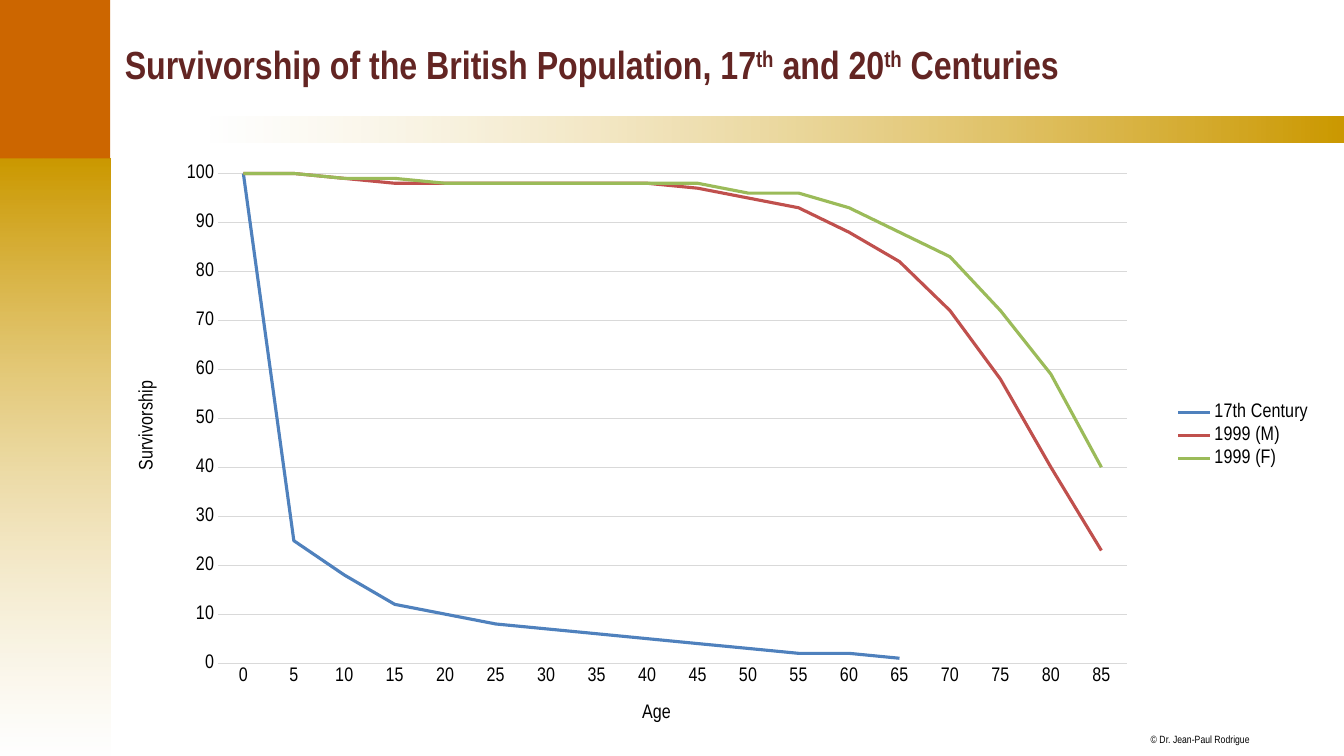
from dataclasses import dataclass
from typing import Optional

from lxml import etree
from pptx import Presentation
from pptx import util as u
from pptx.chart import data as cd
from pptx.dml.color import RGBColor
from pptx.enum import chart as ch, shapes, text
from pptx.oxml import ns

FACE = "Arial Narrow"
BLACK = RGBColor(0x00, 0x00, 0x00)
WHITE = RGBColor(0xFF, 0xFF, 0xFF)
GOLD = RGBColor(0xCC, 0x99, 0x00)
RUST = RGBColor(0xCC, 0x66, 0x00)
WINE = RGBColor(0x63, 0x25, 0x23)
GREY = RGBColor(0xD9, 0xD9, 0xD9)
BLUE = RGBColor(0x4F, 0x81, 0xBD)
RED = RGBColor(0xC0, 0x50, 0x4D)
GREEN = RGBColor(0x9B, 0xBB, 0x59)


@dataclass
class Band:
    left: float
    top: float
    width: float
    height: float
    first: RGBColor
    last: Optional[RGBColor] = None
    angle: float = 0


@dataclass
class Curve:
    name: str
    color: RGBColor
    vals: list


BANDS = [
    Band(-0.04, 3.99, 2.83, 15.06, GOLD, WHITE, 270),
    Band(5.31, 2.93, 28.57, 0.67, WHITE, GOLD),
    Band(-0.04, -0.03, 2.82, 4.02, RUST),
]
CURVES = [
    Curve("17th Century", BLUE,
          [100, 25, 18, 12, 10, 8, 7, 6, 5, 4, 3, 2, 2, 1] + [None] * 4),
    Curve("1999 (M)", RED,
          [100, 100, 99, 98, 98, 98, 98, 98, 98, 97, 95, 93, 88, 82, 72, 58,
           40, 23]),
    Curve("1999 (F)", GREEN,
          [100, 100, 99, 99, 98, 98, 98, 98, 98, 98, 96, 96, 93, 88, 83, 72,
           59, 40]),
]
TITLE = [("Survivorship of the British Population, 17", False), ("th", True),
         (" and 20", False), ("th", True), (" Centuries", False)]


def style(font, size: float, color: RGBColor, bold: bool = False) -> None:
    form = {"name": FACE, "size": u.Pt(size), "bold": bold}
    for key, val in form.items():
        setattr(font, key, val)
    font.color.rgb = color


def draw_band(slide, band: Band) -> None:
    box = slide.shapes.add_shape(
        shapes.MSO_SHAPE.RECTANGLE, u.Cm(band.left), u.Cm(band.top),
        u.Cm(band.width), u.Cm(band.height))
    box.shadow.inherit = False
    box.line.fill.background()
    if band.last is None:
        box.fill.solid()
        box.fill.fore_color.rgb = band.first
        return
    box.fill.gradient()
    box.fill.gradient_angle = band.angle
    for stop, color in zip(box.fill.gradient_stops, (band.first, band.last)):
        stop.color.rgb = color
    # The white end is half transparent
    for node in box._element.spPr.iter(ns.qn("a:srgbClr")):
        if node.get("val") == str(WHITE):
            etree.SubElement(node, ns.qn("a:alpha")).set("val", "50000")


def draw_title(slide) -> None:
    head = slide.shapes.title
    form = {"left": 2.89, "top": 0.28, "width": 30.4, "height": 2.64}
    for key, val in form.items():
        setattr(head, key, u.Cm(val))
    frame = head.text_frame
    frame.vertical_anchor = text.MSO_ANCHOR.MIDDLE
    frame.word_wrap = True
    para = frame.paragraphs[0]
    para.alignment = text.PP_ALIGN.LEFT
    for words, raised in TITLE:
        run = para.add_run()
        run.text = words
        style(run.font, 28, WINE, True)
        if raised:
            run.font._element.set("baseline", "30000")


def draw_credit(slide) -> None:
    box = slide.shapes.add_textbox(u.Cm(29), u.Cm(18.48), u.Cm(2.51), u.Cm(0.33))
    frame = box.text_frame
    for side in ("left", "top", "right", "bottom"):
        setattr(frame, "margin_" + side, 0)
    frame.word_wrap = False
    run = frame.paragraphs[0].add_run()
    run.text = "© Dr. Jean-Paul Rodrigue"
    style(run.font, 7.5, BLACK)


def make_layout(inner: bool, **parts: float):
    """Build a manual chart layout from percentages of the chart area."""
    lay = etree.Element(ns.qn("c:layout"))
    man = etree.SubElement(lay, ns.qn("c:manualLayout"))
    tags = {"layoutTarget": "inner"} if inner else {}
    tags |= {"xMode": "edge", "yMode": "edge"}
    tags |= {key: str(val / 100) for key, val in parts.items()}
    for tag, val in tags.items():
        etree.SubElement(man, ns.qn("c:" + tag)).set("val", val)
    return lay


def set_layout(node, lay, after: Optional[str] = None) -> None:
    for old in node.findall(ns.qn("c:layout")):
        node.remove(old)
    if after:
        node.find(ns.qn(after)).addnext(lay)
    else:
        node.insert(0, lay)


def set_axis(axis, name: str, x: float, y: float) -> None:
    axis.major_tick_mark = axis.minor_tick_mark = ch.XL_TICK_MARK.NONE
    style(axis.tick_labels.font, 14, BLACK)
    run = axis.axis_title.text_frame.paragraphs[0].add_run()
    run.text = name
    style(run.font, 14, BLACK)
    set_layout(axis.axis_title._element, make_layout(False, x=x, y=y), "c:tx")


def set_line(line, color: RGBColor, width: float) -> None:
    line.color.rgb = color
    line.width = u.Pt(width)


def draw_chart(slide) -> None:
    data = cd.CategoryChartData()
    data.categories = [str(age) for age in range(0, 90, 5)]
    for curve in CURVES:
        data.add_series(curve.name, curve.vals)
    chart = slide.shapes.add_chart(
        ch.XL_CHART_TYPE.LINE, u.Cm(2.81), u.Cm(3.64), u.Cm(30.53), u.Cm(14.71),
        data).chart
    style(chart.font, 14, BLACK)
    chart.has_title = False
    plot = chart.plots[0]
    plot.vary_by_categories = False
    for line, curve in zip(plot.series, CURVES):
        line.smooth = False
        set_line(line.format.line, curve.color, 2.25)

    # Axes and grid
    ages, share = chart.category_axis, chart.value_axis
    set_axis(ages, "Age", 43.5, 95)
    set_axis(share, "Survivorship", 1.7, 40)
    set_line(ages.format.line, GREY, 0.75)
    share.format.line.fill.background()
    share.minimum_scale, share.maximum_scale, share.major_unit = 0, 100, 10
    set_line(share.major_gridlines.format.line, GREY, 0.75)

    # Legend and plot area
    chart.has_legend = True
    chart.legend.position = ch.XL_LEGEND_POSITION.RIGHT
    chart.legend.include_in_layout = False
    style(chart.legend.font, 14, BLACK)
    area = chart._chartSpace.chart.plotArea
    set_layout(area, make_layout(True, x=8.8, y=5, w=75, h=84.1))


def main() -> None:
    deck = Presentation()
    deck.slide_width, deck.slide_height = u.Cm(33.87), u.Cm(19.05)
    slide = deck.slides.add_slide(deck.slide_layouts[5])
    for band in BANDS:
        draw_band(slide, band)
    draw_title(slide)
    draw_credit(slide)
    draw_chart(slide)
    deck.save("out.pptx")


if __name__ == "__main__":
    main()
